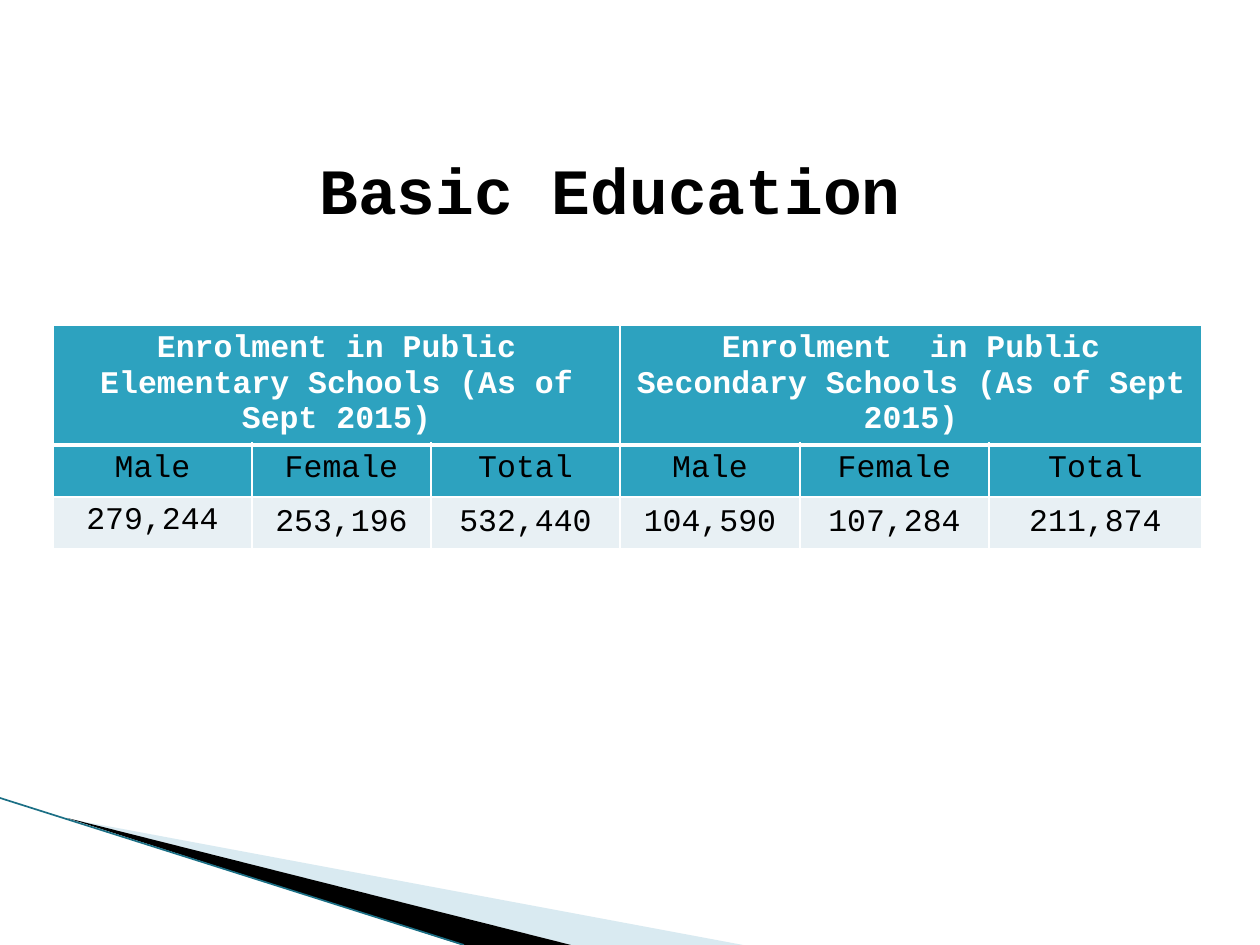
from lxml import etree
from pptx import Presentation
from pptx.dml.color import RGBColor
from pptx.enum.shapes import MSO_CONNECTOR
from pptx.enum.text import MSO_ANCHOR, MSO_AUTO_SIZE, PP_ALIGN
from pptx.oxml.ns import qn
from pptx.util import Emu, Pt

EMU_PER_PX = 914400 / 126
STRAIGHT = MSO_CONNECTOR.STRAIGHT
TOP, MIDDLE = MSO_ANCHOR.TOP, MSO_ANCHOR.MIDDLE
CENTER = PP_ALIGN.CENTER
NO_AUTOFIT = MSO_AUTO_SIZE.NONE

BLACK = RGBColor(0x00, 0x00, 0x00)
WHITE = RGBColor(0xFF, 0xFF, 0xFF)
TEAL = RGBColor(0x2D, 0xA2, 0xBF)
DARK_TEAL = RGBColor(0x1B, 0x6F, 0x85)
PALE_BLUE = RGBColor(0xA0, 0xCB, 0xDC)
PALE_GRAY = RGBColor(0xE8, 0xF0, 0xF4)

TITLE_FORMAT = {"name": "Courier New", "size": Pt(36.9), "bold": True}
HEADING_FORMAT = {"name": "Courier New", "size": Pt(18), "bold": True}
CELL_FORMAT = {"name": "Courier New", "size": Pt(18), "bold": False}

COLUMN_WIDTHS = [199, 179, 189, 180, 189, 213]
ROW_HEIGHTS = [119, 52, 52]
GROUP_SIZE = 3
HEADINGS = [
    "Enrolment in Public Elementary Schools (As of Sept 2015)",
    "Enrolment  in Public Secondary Schools (As of Sept 2015)",
]
LABELS = ["Male", "Female", "Total"] * len(HEADINGS)
ENROLMENT = ["279,244", "253,196", "532,440", "104,590", "107,284", "211,874"]


def px(length):
    return Emu(round(length * EMU_PER_PX))


class SlideBuilder:
    def __init__(self, deck):
        self.slide = deck.slides.add_slide(deck.slide_layouts[5])
        self.shapes = self.slide.shapes

    def add_text(self, frame, text, color, font_format):
        para = frame.paragraphs[0]
        para.alignment = CENTER
        span = para.add_run()
        span.text = text
        span.font.color.rgb = color
        for name, value in font_format.items():
            setattr(span.font, name, value)

    def title(self, text, left, top, width, height, right_inset, bottom_inset):
        box = self.shapes.title
        box.left, box.top, box.width, box.height = map(px, (left, top, width, height))
        frame = box.text_frame
        settings = {
            "word_wrap": True, "auto_size": NO_AUTOFIT, "vertical_anchor": MIDDLE,
            "margin_left": 0, "margin_top": 0,
            "margin_right": px(right_inset), "margin_bottom": px(bottom_inset),
        }
        for name, value in settings.items():
            setattr(frame, name, value)
        self.add_text(frame, text, BLACK, TITLE_FORMAT)

    def wedge(self, points, color, opacity=100):
        builder = self.shapes.build_freeform(*points[0], scale=EMU_PER_PX)
        builder.add_line_segments(points[1:], close=True)
        wedge = builder.convert_to_shape()
        wedge.shadow.inherit = False
        wedge.line.fill.background()
        wedge.fill.solid()
        wedge.fill.fore_color.rgb = color
        if opacity < 100:
            color_element = next(wedge.element.spPr.iter(qn("a:srgbClr")))
            etree.SubElement(color_element, qn("a:alpha"), val=str(opacity * 1000))

    def line(self, start, end, color, width):
        line = self.shapes.add_connector(STRAIGHT, *map(px, start + end))
        line.line.color.rgb = color
        line.line.width = Pt(width)
        etree.SubElement(line.element.spPr, qn("a:effectLst"))

    def borders(self, cell, top, bottom):
        properties = cell._tc.get_or_add_tcPr()
        for side, width in {"L": 1, "R": 1, "T": top, "B": bottom}.items():
            edge = etree.SubElement(properties, qn(f"a:ln{side}"), w=str(int(Pt(width))))
            fill = etree.SubElement(edge, qn("a:solidFill"))
            etree.SubElement(fill, qn("a:srgbClr"), val=str(WHITE))

    def table(self, left, top):
        size = sum(COLUMN_WIDTHS), sum(ROW_HEIGHTS)
        table = self.shapes.add_table(
            len(ROW_HEIGHTS), len(COLUMN_WIDTHS), *map(px, (left, top) + size)
        ).table
        table.first_row = table.horz_banding = False
        for column, width in zip(table.columns, COLUMN_WIDTHS):
            column.width = px(width)
        for row, height in zip(table.rows, ROW_HEIGHTS):
            row.height = px(height)
        for row, fill, above, below in zip(
            table.rows, (TEAL, TEAL, PALE_GRAY), (1, 3, 1), (3, 1, 1)
        ):
            for cell in row.cells:
                self.borders(cell, above, below)
                cell.fill.solid()
                cell.fill.fore_color.rgb = fill
        for index, heading in enumerate(HEADINGS):
            first = index * GROUP_SIZE
            cell = table.cell(0, first)
            cell.merge(table.cell(0, first + GROUP_SIZE - 1))
            self.add_text(cell.text_frame, heading, WHITE, HEADING_FORMAT)
        for row, texts in enumerate((LABELS, ENROLMENT), start=1):
            for column, text in enumerate(texts):
                cell = table.cell(row, column)
                cell.vertical_anchor = MIDDLE if row == 2 and column else TOP
                self.add_text(cell.text_frame, text, BLACK, CELL_FORMAT)


def main():
    deck = Presentation()
    deck.slide_width, deck.slide_height = px(1260), px(945)
    page = SlideBuilder(deck)
    page.wedge([(69, 819), (743, 945), (571, 945)], PALE_BLUE, opacity=40)
    page.wedge([(67, 818), (571, 945), (462, 945)], BLACK)
    page.line((0, 798), (464, 945), DARK_TEAL, 0.95)
    page.table(53, 325)
    page.title("Basic Education", 32, 165, 1197, 116, right_inset=40, bottom_inset=68)
    deck.save("out.pptx")


if __name__ == "__main__":
    main()
